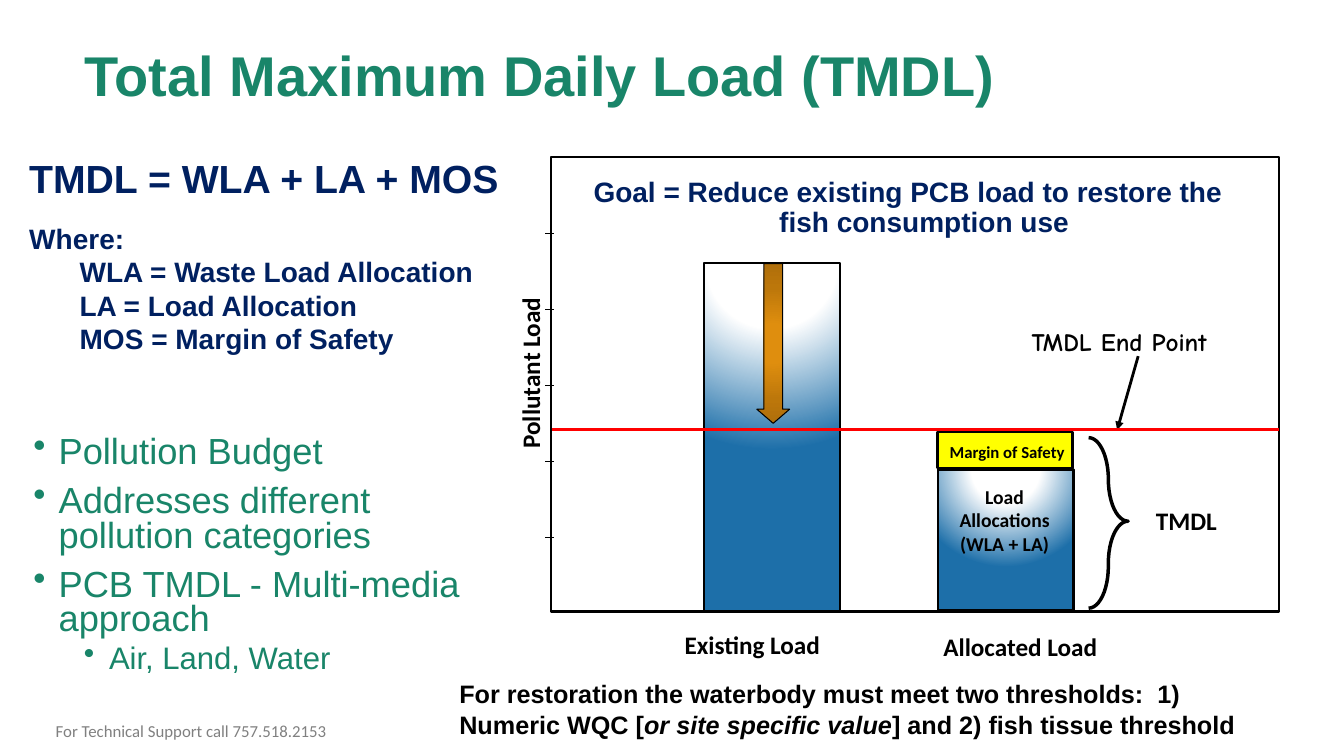
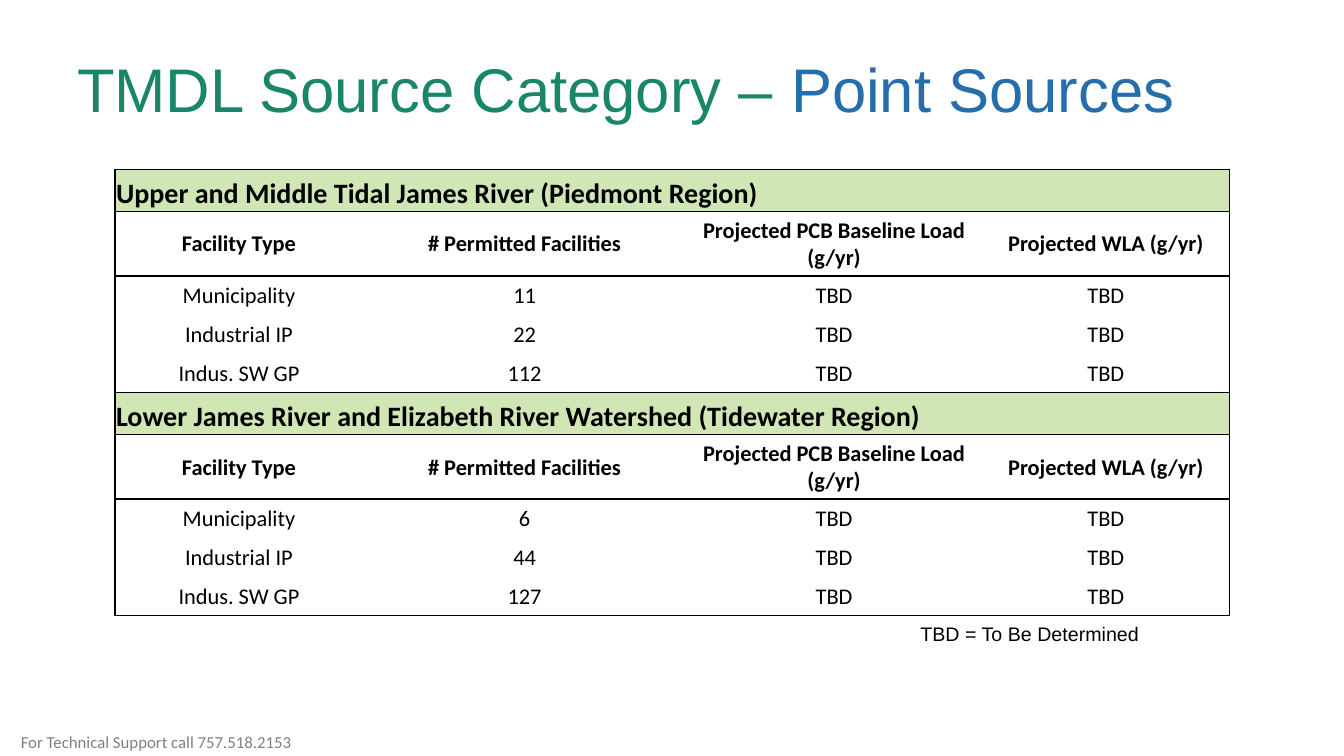
from dataclasses import dataclass, field
from typing import Any, NamedTuple

from lxml.etree import SubElement
from pptx import Presentation
from pptx.dml.color import RGBColor
from pptx.enum.shapes import MSO_CONNECTOR, MSO_SHAPE
from pptx.enum.text import MSO_ANCHOR, PP_ALIGN
from pptx.oxml.ns import qn
from pptx.util import Emu, Inches, Pt

SLIDE_WIDTH, SLIDE_HEIGHT = Inches(13.333), Inches(7.5)
GRID_COLUMNS, GRID_ROWS = 160, 90

COLORS = {
    "green": "198569", "blue": "256EAB", "navy": "002060", "black": "000000",
    "gray": "808080", "white": "FFFFFF", "red": "FF0000", "yellow": "FFFF00",
    "band": "D1E6B5", "load": "1D6FA9", "amber": "DF8E0E", "ochre": "BC770B",
    "brown": "B06F0B",
}


def font_format(name: str, size: float, ink: str, bold: bool = False) -> dict[str, Any]:
    return {"name": name, "size": Pt(size), "bold": bold, "ink": ink}


FONTS = {
    "title": font_format("Arial", 40, "green", True),
    "category": font_format("Arial", 44, "green"),
    "category_accent": font_format("Arial", 44, "blue"),
    "point": font_format("Arial", 25.9, "green"),
    "subpoint": font_format("Arial", 22.2, "green"),
    "equation": font_format("Arial", 28, "navy", True),
    "statement": font_format("Arial", 20, "navy", True),
    "threshold": font_format("Arial", 18, "black", True),
    "threshold_value": {**font_format("Arial", 18, "black", True), "italic": True},
    "axis": font_format("Calibri", 18, "black", True),
    "allocation": font_format("Calibri", 14, "black", True),
    "safety": font_format("Calibri", 12, "black", True),
    "end_point": font_format("Comic Neue", 18, "black", True),
    "footer": font_format("Calibri", 12, "gray"),
    "region": font_format("Calibri", 20, "black", True),
    "heading": font_format("Calibri", 16, "black", True),
    "facility": font_format("Calibri", 16, "black"),
    "legend": font_format("Arial", 14, "black"),
}


class Box(NamedTuple):
    left: float
    top: float
    width: float
    height: float


class Run(NamedTuple):
    text: str
    font: str


@dataclass
class Line:
    runs: list[Run]
    layout: dict[str, Any] = field(default_factory=dict)
    margin: float = 0
    indent: float = 0
    bullet: str = ""


class Stop(NamedTuple):
    share: int
    color: str


class Gradient(NamedTuple):
    stops: tuple[Stop, ...]
    top: int
    bottom: int


class Figure(NamedTuple):
    preset: MSO_SHAPE
    box: Box
    fill: str | Gradient | None
    weight: float
    adjustments: tuple[float, ...] = ()


class Stroke(NamedTuple):
    start: tuple[float, float]
    end: tuple[float, float]
    color: str
    weight: float
    arrow: bool = False


class Label(NamedTuple):
    text: str
    font: str
    box: Box
    turn: int = 0
    layout: dict[str, Any] = {}
    inset: float = 0


CENTERED = {"alignment": PP_ALIGN.CENTER}
MIDDLE = {"vertical_anchor": MSO_ANCHOR.MIDDLE}
TIGHT = {"line_spacing": 0.9}


def across(columns: float) -> Emu:
    return Emu(round(SLIDE_WIDTH * columns / GRID_COLUMNS))


def down(rows: float) -> Emu:
    return Emu(round(SLIDE_HEIGHT * rows / GRID_ROWS))


def place(box: Box) -> tuple[Emu, Emu, Emu, Emu]:
    return across(box.left), down(box.top), across(box.width), down(box.height)


def rgb(color: str) -> RGBColor:
    return RGBColor.from_string(COLORS[color])


def set_all(target: Any, values: dict[str, Any]) -> None:
    for key, value in values.items():
        if key == "ink":
            target.color.rgb = rgb(value)
        else:
            setattr(target, key, value)


def add_color(parent: Any, color: str) -> None:
    SubElement(parent, qn("a:srgbClr"), val=COLORS[color])


def write_lines(frame: Any, lines: list[Line]) -> None:
    for index, line in enumerate(lines):
        paragraph = frame.add_paragraph() if index else frame.paragraphs[0]
        set_all(paragraph, line.layout)
        properties = paragraph._p.get_or_add_pPr()
        properties.set("marL", str(Inches(line.margin)))
        properties.set("indent", str(Inches(line.indent)))
        if line.bullet:
            SubElement(properties, qn("a:buChar"), char=line.bullet)
        for text, font in line.runs:
            run = paragraph.add_run()
            run.text = text
            set_all(run.font, FONTS[font])


def add_text(slide: Any, box: Box, lines: list[Line], frame_format: dict[str, Any] = {}) -> Any:
    holder = slide.shapes.add_textbox(*place(box))
    set_all(holder.text_frame, {"word_wrap": True, **frame_format})
    write_lines(holder.text_frame, lines)
    return holder


def add_title(slide: Any, box: Box, runs: list[Run]) -> None:
    add_text(slide, box, [Line(runs, TIGHT)], MIDDLE)


def add_footer(slide: Any, box: Box, layout: dict[str, Any]) -> None:
    contact = Run("For Technical Support call 757.518.2153", "footer")
    add_text(slide, box, [Line([contact], layout)], MIDDLE)


def add_label(slide: Any, label: Label) -> None:
    sides = ("margin_left", "margin_right", "margin_top", "margin_bottom")
    insets = {side: Inches(label.inset) for side in sides}
    line = Line([Run(label.text, label.font)], label.layout)
    holder = add_text(slide, label.box, [line], {**insets, **MIDDLE})
    holder.rotation = label.turn


def apply_gradient(shape: Any, gradient: Gradient) -> None:
    shape.fill.solid()
    properties = shape._element.spPr
    solid = properties.find(qn("a:solidFill"))
    blend = SubElement(properties, qn("a:gradFill"), rotWithShape="1")
    properties.replace(solid, blend)
    stops = SubElement(blend, qn("a:gsLst"))
    for share, color in gradient.stops:
        add_color(SubElement(stops, qn("a:gs"), pos=str(share * 1000)), color)
    shade = SubElement(blend, qn("a:path"), {"path": "circle"})
    SubElement(shade, qn("a:fillToRect"), l="50000", r="50000",
               t=str(gradient.top * 1000), b=str(gradient.bottom * 1000))


def add_figure(slide: Any, figure: Figure) -> None:
    shape = slide.shapes.add_shape(figure.preset, *place(figure.box))
    shape.shadow.inherit = False
    for index, value in enumerate(figure.adjustments):
        shape.adjustments[index] = value
    if figure.fill is None:
        shape.fill.background()
    elif isinstance(figure.fill, Gradient):
        apply_gradient(shape, figure.fill)
    else:
        shape.fill.solid()
        shape.fill.fore_color.rgb = rgb(figure.fill)
    set_all(shape.line, {"ink": "black", "width": Pt(figure.weight)})


def add_stroke(slide: Any, stroke: Stroke) -> None:
    (x1, y1), (x2, y2) = stroke.start, stroke.end
    connector = slide.shapes.add_connector(
        MSO_CONNECTOR.STRAIGHT, across(x1), down(y1), across(x2), down(y2))
    set_all(connector.line, {"ink": stroke.color, "width": Pt(stroke.weight)})
    if stroke.arrow:
        SubElement(connector.line._get_or_add_ln(), qn("a:tailEnd"), type="triangle")
    SubElement(connector._element.spPr, qn("a:effectLst"))


def draw_load_diagram(slide: Any) -> None:
    load = Gradient((Stop(0, "white"), Stop(35, "white"), Stop(100, "load")), -80, 180)
    reduction = Gradient((Stop(0, "amber"), Stop(23, "amber"),
                          Stop(69, "ochre"), Stop(97, "brown")), 50, 50)
    end_point_row = 51.1
    figures = [
        Figure(MSO_SHAPE.RECTANGLE, Box(65.6, 18.7, 86.7, 54.1), "white", 1.63),
        Figure(MSO_SHAPE.RECTANGLE, Box(83.8, 31.3, 16.2, 41.5), load, 1.63),
        Figure(MSO_SHAPE.RECTANGLE, Box(111.7, 55.9, 16.1, 16.8), load, 1.63),
        Figure(MSO_SHAPE.RIGHT_BRACE, Box(129.6, 52.1, 4.7, 20.3), None, 2.5, (1.3, 0.49)),
        Figure(MSO_SHAPE.DOWN_ARROW, Box(90.1, 31.4, 3.9, 19), reduction, 0.75, (0.57, 0.43)),
        Figure(MSO_SHAPE.RECTANGLE, Box(111.6, 51.4, 16.1, 4.3), "yellow", 1.63),
    ]
    ticks = [Stroke((64.9, row), (66, row), "black", 0.75)
             for row in (27.8 + 9.05 * step for step in range(5))]
    strokes = ticks + [
        Stroke((135.5, 42.4), (133, 51.2), "black", 2, True),
        Stroke((65.7, end_point_row), (152.3, end_point_row), "red", 2.25),
    ]
    labels = [
        Label("Existing Load", "axis", Box(81.5, 74.9, 18, 3.6)),
        Label("Allocated Load", "axis", Box(112.3, 75.2, 20, 3.6)),
        Label("TMDL", "axis", Box(137.6, 60.2, 9, 3.6)),
        Label("Pollutant Load", "axis", Box(50.1, 38.6, 26, 3.6), 270),
        Label("TMDL End Point", "end_point", Box(122.8, 38.6, 28, 4)),
        Label("Margin of Safety", "safety", Box(111.2, 51.7, 17.4, 4.2), 0, CENTERED, 0.05),
        Label("Load Allocations (WLA + LA)", "allocation",
              Box(112.4, 56.3, 14.4, 11.2), 0, CENTERED, 0.1),
    ]
    for figure in figures:
        add_figure(slide, figure)
    for stroke in strokes:
        add_stroke(slide, stroke)
    for label in labels:
        add_label(slide, label)


def build_load_slide(slide: Any) -> None:
    add_title(slide, Box(8.9, 1.8, 144, 15), [Run("Total Maximum Daily Load (TMDL)", "title")])
    points = ["Pollution Budget", "Addresses different pollution categories",
              "PCB TMDL - Multi-media approach"]
    budget = [Line([Run(point, "point")],
                   {"line_spacing": 0.8, "space_before": Pt(10 if index else 0)},
                   0.25, -0.25, "•") for index, point in enumerate(points)]
    budget.append(Line([Run("Air, Land, Water", "subpoint")],
                       {"line_spacing": 0.8, "space_before": Pt(5), "level": 1},
                       0.75, -0.25, "•"))
    add_text(slide, Box(2.8, 51.4, 58, 31.3), budget)
    draw_load_diagram(slide)
    goal = Run("Goal = Reduce existing PCB load to restore the fish consumption use", "statement")
    add_text(slide, Box(67.8, 20.6, 80.6, 11), [Line([goal], {**CENTERED, **TIGHT}, 0.32, -0.32)])
    terms = ["WLA = Waste Load Allocation", "LA = Load Allocation", "MOS = Margin of Safety"]
    equation = [Line([Run("TMDL = WLA + LA + MOS", "equation")]),
                Line([Run("Where:", "statement")], {"space_before": Pt(14)})]
    equation += [Line([Run(term, "statement")], margin=0.5) for term in terms]
    add_text(slide, Box(2.3, 17.8, 60, 25.4), equation)
    add_text(slide, Box(53.5, 80.2, 97.7, 8.5), [Line([
        Run("For restoration the waterbody must meet two thresholds:  1) Numeric WQC [", "threshold"),
        Run("or site specific value", "threshold_value"),
        Run("] and 2) fish tissue threshold", "threshold")])])
    add_footer(slide, Box(0, 84, 45.5, 6), CENTERED)


def format_cell(cell: Any, fill: str, edges: dict[str, float]) -> None:
    inset = Inches(0.01)
    set_all(cell, {"margin_left": inset, "margin_right": inset,
                   "margin_top": inset, "margin_bottom": 0})
    cell.fill.solid()
    cell.fill.fore_color.rgb = rgb(fill)
    properties = cell._tc.get_or_add_tcPr()
    for index, (side, weight) in enumerate(edges.items()):
        edge = SubElement(properties, qn(f"a:ln{side}"), w=str(Pt(weight)))
        properties.insert(index, edge)
        if weight:
            add_color(SubElement(edge, qn("a:solidFill")), "black")
        else:
            SubElement(edge, qn("a:noFill"))


def draw_source_table(slide: Any) -> None:
    headings = ["Facility Type", "# Permitted Facilities",
                "Projected PCB Baseline Load (g/yr)", "Projected WLA (g/yr)"]
    facilities = ["Municipality", "Industrial IP", "Indus. SW GP"]
    regions = {
        "Upper and Middle Tidal James River (Piedmont Region)": [11, 22, 112],
        "Lower James River and Elizabeth River Watershed (Tidewater Region)": [6, 44, 127],
    }
    rows = []
    for region, counts in regions.items():
        rows += [("region", [region, "", "", ""]), ("heading", headings)]
        rows += [("facility", [facility, str(count), "TBD", "TBD"])
                 for facility, count in zip(facilities, counts)]
    row_heights = [5, 7.7, 4.63, 4.63, 4.63] * len(regions)
    rules_below = [1, 2, 0, 0, 1] * len(regions)
    column_widths = [29.5, 38.5, 35.2, 29.5]
    box = Box(13.7, 20.15, sum(column_widths), sum(row_heights))
    table = slide.shapes.add_table(len(rows), len(headings), *place(box)).table
    set_all(table, {"first_row": False, "horz_banding": False})
    for column, width in zip(table.columns, column_widths):
        column.width = across(width)
    for r, (kind, texts) in enumerate(rows):
        table.rows[r].height = down(row_heights[r])
        is_region = kind == "region"
        for c, text in enumerate(texts):
            cell = table.cell(r, c)
            edges = {"L": int(c == 0), "R": int(is_region or c == len(texts) - 1),
                     "T": rules_below[r - 1] if r else 1, "B": rules_below[r]}
            format_cell(cell, "band" if is_region else "white", edges)
            cell.vertical_anchor = MSO_ANCHOR.BOTTOM if is_region else MSO_ANCHOR.MIDDLE
            if text:
                write_lines(cell.text_frame, [Line([Run(text, kind)], {} if is_region else CENTERED)])
        if is_region:
            table.cell(r, 0).merge(table.cell(r, len(texts) - 1))


def build_source_slide(slide: Any) -> None:
    add_title(slide, Box(8, 3.6, 144, 14.8), [Run("TMDL Source Category – ", "category"),
                                              Run("Point Sources", "category_accent")])
    draw_source_table(slide)
    add_text(slide, Box(108.4, 73.4, 42, 4.1), [Line([Run("TBD = To Be Determined", "legend")])])
    add_footer(slide, Box(1.3, 86.5, 50.6, 3.5), {"alignment": PP_ALIGN.LEFT})


def main() -> None:
    deck = Presentation()
    set_all(deck, {"slide_width": SLIDE_WIDTH, "slide_height": SLIDE_HEIGHT})
    for build in (build_load_slide, build_source_slide):
        build(deck.slides.add_slide(deck.slide_layouts[6]))
    deck.save("out.pptx")


if __name__ == "__main__":
    main()
